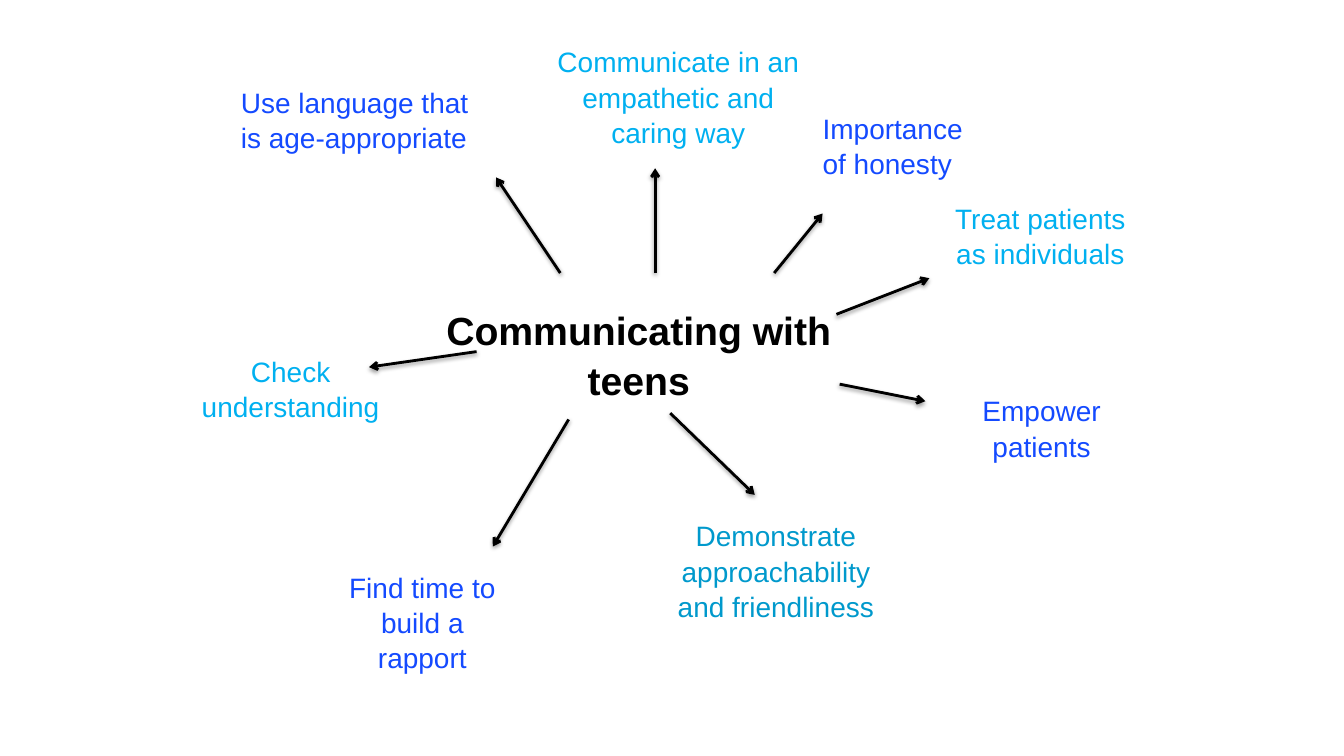
from lxml import etree
from pptx import Presentation
from pptx.dml.color import RGBColor
from pptx.enum.shapes import MSO_CONNECTOR
from pptx.enum.text import MSO_ANCHOR, MSO_AUTO_SIZE, PP_ALIGN
from pptx.oxml.ns import qn
from pptx.util import Cm, Pt

COLORS = {"black": "000000", "blue": "144AFF", "sky": "00B0F0", "teal": "0099CC"}
LEFT, CENTER = PP_ALIGN.LEFT, PP_ALIGN.CENTER


def write_text(sp, text, size, color, align, bold=False):
    tf = sp.text_frame
    tf.word_wrap = True
    tf.auto_size = MSO_AUTO_SIZE.NONE
    tf.vertical_anchor = MSO_ANCHOR.TOP
    tf.margin_left = tf.margin_top = tf.margin_right = tf.margin_bottom = 0
    p = tf.paragraphs[0]
    p.alignment = align
    p.line_spacing = 1.05
    p.space_before = Pt(0)
    r = p.add_run()
    r.text = text
    r.font.name = "Arial"
    r.font.size = Pt(size)
    r.font.bold = bold
    r.font.color.rgb = RGBColor.from_string(COLORS[color])


def add_arrow(slide, start, end):
    line = slide.shapes.add_connector(
        MSO_CONNECTOR.STRAIGHT, *[Cm(v) for v in start + end])
    line.line.width = Pt(2)
    line.line.color.rgb = RGBColor.from_string(COLORS["black"])
    ln = line.line._get_or_add_ln()
    etree.SubElement(ln, qn("a:tailEnd"), type="arrow")
    # Soft shadow below the line
    effects = etree.SubElement(line._element.spPr, qn("a:effectLst"))
    shadow = etree.SubElement(effects, qn("a:outerShdw"), blurRad=str(Pt(3.1)),
                              dist=str(Pt(1.6)), dir="5400000", rotWithShape="0")
    shade = etree.SubElement(shadow, qn("a:srgbClr"), val=COLORS["black"])
    etree.SubElement(shade, qn("a:alpha"), val="38000")


prs = Presentation()
prs.slide_width, prs.slide_height = Cm(33.87), Cm(19.05)
s = prs.slides.add_slide(prs.slide_layouts[5])

# Central topic
title = s.shapes.title
title.left, title.top, title.width, title.height = Cm(10.67), Cm(7.67), Cm(10.85), Cm(1.19)
write_text(title, "Communicating with teens", 28, "black", CENTER, bold=True)

# Ideas clockwise: text, colour, alignment, box, arrow start, arrow end
ideas = [
    ("Use language that is age-appropriate", "blue", LEFT,
     (6.07, 2.11, 6.02, 2.62), (14.12, 6.88), (12.5, 4.47)),
    ("Communicate in an empathetic and caring way", "sky", CENTER,
     (13.87, 1.09, 6.45, 2.57), (16.51, 6.88), (16.51, 4.24)),
    ("Importance of honesty", "blue", LEFT,
     (20.73, 2.77, 3.81, 2.62), (19.51, 6.88), (20.73, 5.38)),
    ("Treat patients as individuals", "sky", CENTER,
     (24.05, 5.03, 4.34, 2.62), (21.08, 7.92), (23.42, 7.01)),
    ("Empower patients", "blue", CENTER,
     (23.9, 9.88, 4.7, 1.7), (21.16, 9.68), (23.32, 10.11)),
    ("Demonstrate approachability and friendliness", "teal", CENTER,
     (16.66, 13.03, 5.79, 2.57), (16.89, 10.41), (19.02, 12.47)),
    ("Find time to build a rapport", "blue", CENTER,
     (8.64, 14.33, 4.01, 2.57), (14.33, 10.57), (12.42, 13.77)),
    ("Check understanding", "sky", CENTER,
     (4.95, 8.89, 4.75, 1.7), (12.01, 8.86), (9.3, 9.25)),
]
for text, color, align, box, start, end in ideas:
    label = s.shapes.add_textbox(*[Cm(v) for v in box])
    write_text(label, text, 20, color, align)
    add_arrow(s, start, end)

prs.save("out.pptx")
